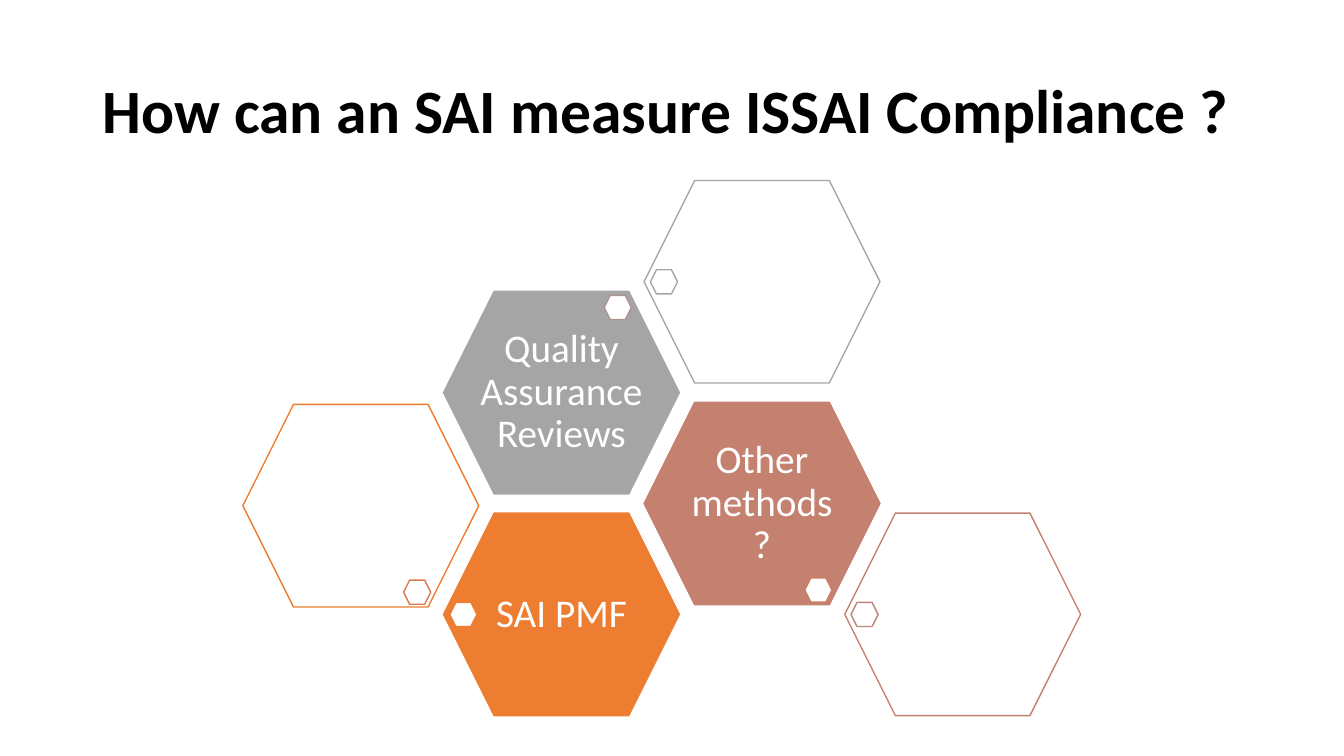
from lxml import etree
from pptx import Presentation
from pptx.dml.color import RGBColor
from pptx.enum.shapes import MSO_SHAPE
from pptx.enum.text import MSO_ANCHOR, MSO_AUTO_SIZE, PP_ALIGN
from pptx.oxml.ns import qn
from pptx.util import Pt

BLACK = RGBColor(0x00, 0x00, 0x00)
WHITE = RGBColor(0xFF, 0xFF, 0xFF)
ORANGE = RGBColor(0xED, 0x7D, 0x31)
CLAY = RGBColor(0xC4, 0x81, 0x70)
GREY = RGBColor(0xA5, 0xA5, 0xA5)
ORANGE_DOT = RGBColor(0xDC, 0x7A, 0x4B)
CLAY_DOT = RGBColor(0xCC, 0x7D, 0x64)
PALE_CLAY_DOT = RGBColor(0xBD, 0x86, 0x7B)
GREY_DOT = RGBColor(0xB0, 0x93, 0x91)

# Honeycomb measures, in points
COMB_LEFT, COMB_TOP = 173.5, 128.9
COLUMN_STEP, ROW_STEP = 143.3, 79.2
CELL_WIDTH, CELL_HEIGHT = 168.5, 144.7
DOT_WIDTH, DOT_HEIGHT = 19.4, 17.3
LABEL_WIDTH, LABEL_HEIGHT = 116, 100

# Places of the small hexagon within its cell
MIDDLE_LEFT = (4.5, 63.8)
BOTTOM_RIGHT = (114.8, 125.5)
TOP_RIGHT = (114.8, 2.9)


def add_hexagon(left, top, width, height, fill_colour, line_colour):
    hexagon = page.shapes.add_shape(
        MSO_SHAPE.HEXAGON, Pt(left), Pt(top), Pt(width), Pt(height))
    hexagon.shadow.inherit = False
    hexagon.fill.solid()
    hexagon.fill.fore_color.rgb = fill_colour
    hexagon.line.color.rgb = line_colour
    hexagon.line.width = Pt(1)
    return hexagon


def write_text(frame, text, size, colour, alignment):
    frame.text = text
    frame.word_wrap = True
    frame.auto_size = MSO_AUTO_SIZE.NONE
    frame.vertical_anchor = MSO_ANCHOR.MIDDLE
    paragraph = frame.paragraphs[0]
    paragraph.alignment = alignment
    paragraph.line_spacing = 0.9
    span = paragraph.runs[0]
    span.font.name = "Calibri"
    span.font.size = Pt(size)
    span.font.color.rgb = colour
    return span


deck = Presentation()
deck.slide_width, deck.slide_height = Pt(960), Pt(540)
page = deck.slides.add_slide(deck.slide_layouts[5])

# Title
title = page.shapes.title
title.left, title.top, title.width, title.height = Pt(66), Pt(28.8), Pt(828), Pt(104.4)
heading = write_text(title.text_frame, "How can an SAI measure ISSAI Compliance ?",
                     44, BLACK, PP_ALIGN.LEFT)
heading.font.bold = True

# Column, row, colour, label (None for an open cell), dot place, dot line
cells = [
    (1, 3, ORANGE, "SAI PMF", MIDDLE_LEFT, ORANGE),
    (0, 2.02, ORANGE, None, BOTTOM_RIGHT, ORANGE_DOT),
    (2, 2, CLAY, "Other methods ?", BOTTOM_RIGHT, CLAY_DOT),
    (3, 3, CLAY, None, MIDDLE_LEFT, PALE_CLAY_DOT),
    (1, 1, GREY, "Quality Assurance Reviews", TOP_RIGHT, GREY_DOT),
    (2, 0, GREY, None, MIDDLE_LEFT, GREY),
]

# Honeycomb
for column, row, colour, label, dot_place, dot_line in cells:
    left = COMB_LEFT + column * COLUMN_STEP
    top = COMB_TOP + row * ROW_STEP
    cell = add_hexagon(left, top, CELL_WIDTH, CELL_HEIGHT,
                       colour if label else WHITE, colour)
    if label:
        box = page.shapes.add_textbox(
            Pt(left + (CELL_WIDTH - LABEL_WIDTH) / 2),
            Pt(top + (CELL_HEIGHT - LABEL_HEIGHT) / 2),
            Pt(LABEL_WIDTH), Pt(LABEL_HEIGHT))
        frame = box.text_frame
        frame.margin_left = frame.margin_right = 0
        frame.margin_top = frame.margin_bottom = Pt(2.8)
        write_text(frame, label, 28, WHITE, PP_ALIGN.CENTER)
    else:
        # Open cells are slightly transparent
        fill_colour = cell.fill.fore_color._xFill.find(qn("a:srgbClr")) \
            if hasattr(cell.fill.fore_color, "_xFill") \
            else cell.element.spPr.find(qn("a:solidFill")).find(qn("a:srgbClr"))
        etree.SubElement(fill_colour, qn("a:alpha")).set("val", "90000")
    add_hexagon(left + dot_place[0], top + dot_place[1],
                DOT_WIDTH, DOT_HEIGHT, WHITE, dot_line)

deck.save("out.pptx")
